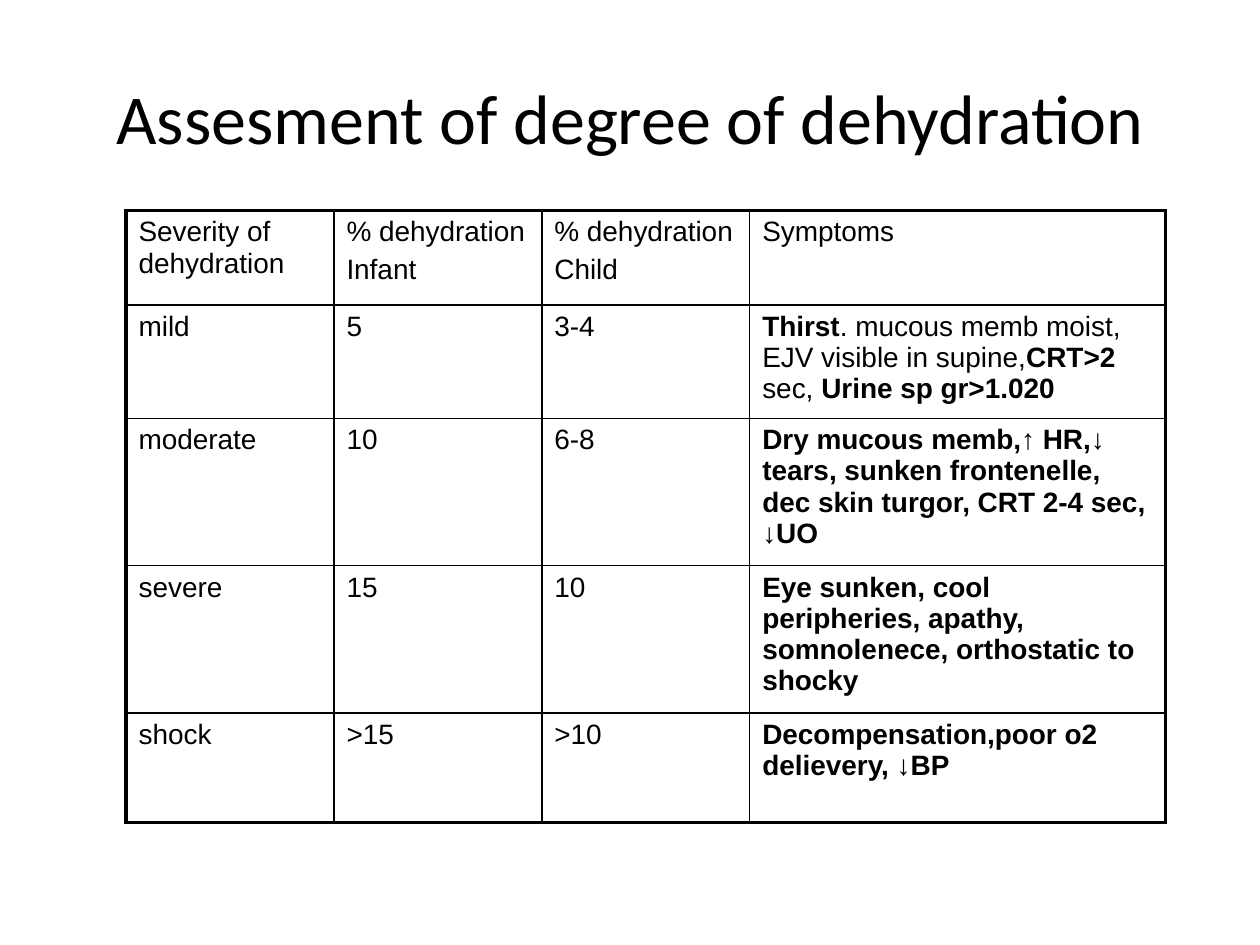
import pptx
import pptx.dml.color
import pptx.enum.text
import pptx.oxml.ns
import pptx.util
from lxml import etree

Inches, Pt = pptx.util.Inches, pptx.util.Pt
BLACK = pptx.dml.color.RGBColor(0x00, 0x00, 0x00)
THIN, THICK = 1, 2.25

# Table content: a line break starts a paragraph, ** switches bold
COLUMNS = [1.65, 1.65, 1.65, 3.3]
HEIGHTS = [0.75, 0.9, 1.17, 1.17, 0.87]
ROWS = [
    ["Severity of dehydration", "% dehydration\nInfant",
     "% dehydration\nChild", "Symptoms"],
    ["mild", "5", "3-4",
     "**Thirst**. mucous memb moist, EJV visible in supine,"
     "**CRT>2** sec, **Urine sp gr>1.020**"],
    ["moderate", "10", "6-8",
     "**Dry mucous memb,↑ HR,↓ tears, sunken frontenelle, "
     "dec skin turgor, CRT 2-4 sec, ↓UO**"],
    ["severe", "15", "10",
     "**Eye sunken, cool peripheries, apathy, somnolenece, "
     "orthostatic to shocky**"],
    ["shock", ">15", ">10", "**Decompensation,poor o2 delievery, ↓BP**"],
]


def add_text(p, text, font="Arial", size=16, color=BLACK, bold=False):
    """Append a formatted run to a paragraph."""
    r = p.add_run()
    r.text = text
    r.font.name = font
    r.font.size = Pt(size)
    r.font.color.rgb = color
    r.font.bold = bold


def set_border(cell, side, width):
    """Draw one side (L, R, T or B) of a cell."""
    qn = pptx.oxml.ns.qn
    ln = etree.SubElement(cell._tc.get_or_add_tcPr(), qn(f"a:ln{side}"),
                          w=str(Pt(width)))
    fill = etree.SubElement(ln, qn("a:solidFill"))
    etree.SubElement(fill, qn("a:srgbClr"), val=str(BLACK))


class SlideBuilder:
    def __init__(self, prs):
        self.s = prs.slides.add_slide(prs.slide_layouts[5])

    def title(self, text, x, y, w, h):
        sp = self.s.shapes.title
        sp.left, sp.top, sp.width, sp.height = map(Inches, (x, y, w, h))
        tf = sp.text_frame
        tf.word_wrap = True
        tf.vertical_anchor = pptx.enum.text.MSO_ANCHOR.MIDDLE
        p = tf.paragraphs[0]
        p.alignment = pptx.enum.text.PP_ALIGN.CENTER
        add_text(p, text, font="Calibri", size=40)

    def cell(self, cell, text):
        tf = cell.text_frame
        for i, line in enumerate(text.split("\n")):
            p = tf.add_paragraph() if i else tf.paragraphs[0]
            p.space_before = Pt(3.5)
            for j, part in enumerate(line.split("**")):
                if part:
                    add_text(p, part, bold=j % 2 == 1)

    def table(self, rows, widths, heights, x, y):
        n_rows, n_cols = len(heights), len(widths)
        table = self.s.shapes.add_table(
            n_rows, n_cols, Inches(x), Inches(y),
            Inches(sum(widths)), Inches(sum(heights))).table
        table.first_row = table.horz_banding = False
        for col, width in zip(table.columns, widths):
            col.width = Inches(width)
        for row, height in zip(table.rows, heights):
            row.height = Inches(height)
        for i, row in enumerate(rows):
            for j, text in enumerate(row):
                cell = table.cell(i, j)
                self.cell(cell, text)
                # Thick outer frame, thin inner grid
                outer = {"L": j == 0, "R": j == n_cols - 1,
                         "T": i == 0, "B": i == n_rows - 1}
                for side, is_outer in outer.items():
                    set_border(cell, side, THICK if is_outer else THIN)
                cell.fill.background()


def main():
    prs = pptx.Presentation()
    prs.slide_width, prs.slide_height = Inches(10), Inches(7.5)
    slide = SlideBuilder(prs)
    slide.title("Assesment of degree of dehydration", 0.5, 0.3, 9, 1.25)
    slide.table(ROWS, COLUMNS, HEIGHTS, 1, 1.67)
    prs.save("out.pptx")


if __name__ == "__main__":
    main()
